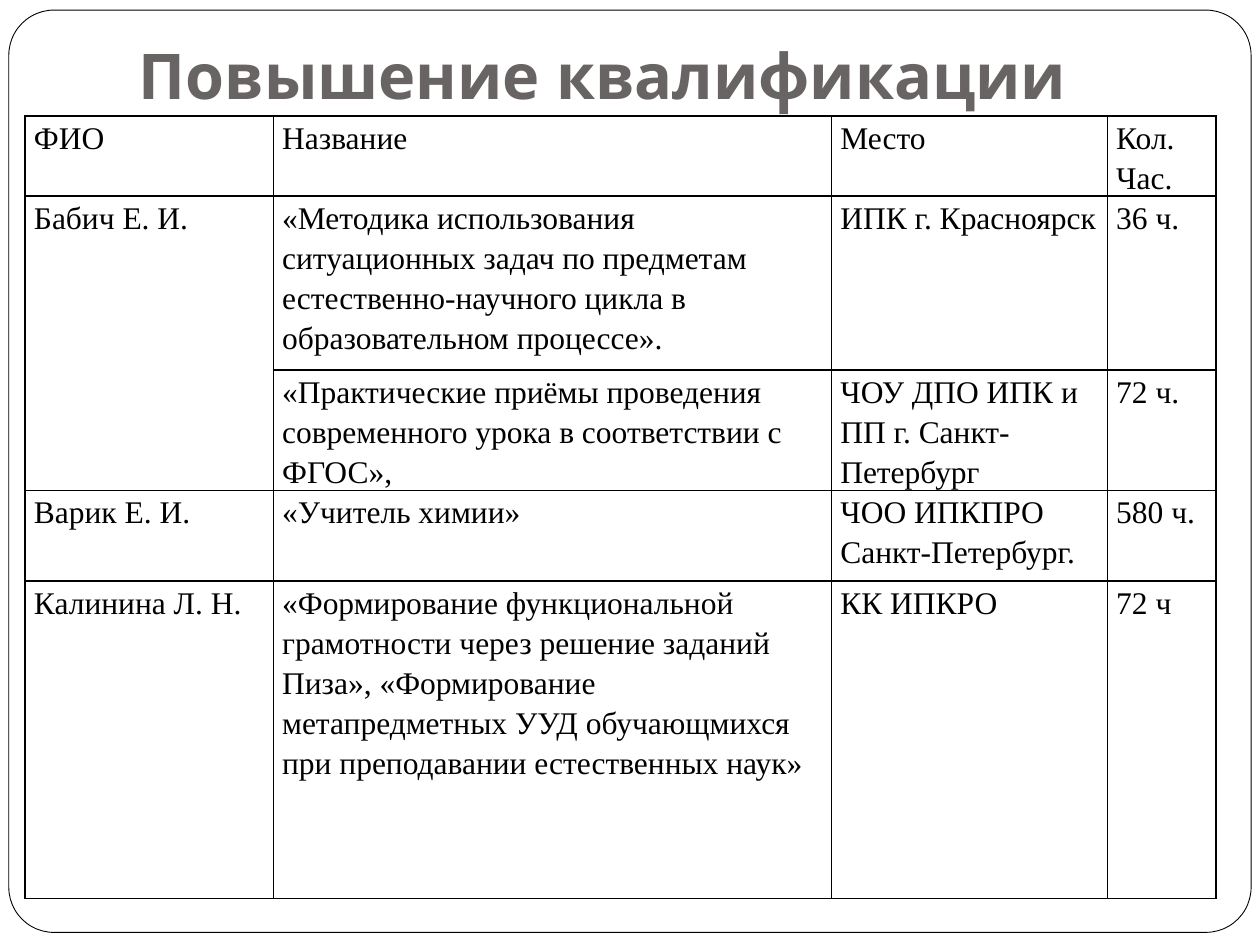
from lxml import etree
from pptx import Presentation
from pptx.dml.color import RGBColor
from pptx.enum.shapes import MSO_SHAPE
from pptx.enum.text import MSO_ANCHOR, MSO_AUTO_SIZE, PP_ALIGN
from pptx.oxml.ns import qn
from pptx.util import Inches, Pt

ROUND = MSO_SHAPE.ROUNDED_RECTANGLE
LEFT = PP_ALIGN.LEFT
BOTTOM, TOP = MSO_ANCHOR.BOTTOM, MSO_ANCHOR.TOP
BLACK, WHITE, GREY = "000000", "FFFFFF", "696464"


def color(code):
    return RGBColor.from_string(code)


def write(frame, text, size=18, font="Times New Roman", ink=BLACK, bold=False,
          space=1.15, anchor=TOP, pads=(0.07, 0, 0.07, 0)):
    frame.text = text
    frame.word_wrap = True
    frame.vertical_anchor = anchor
    (frame.margin_left, frame.margin_top,
     frame.margin_right, frame.margin_bottom) = map(Inches, pads)
    for para in frame.paragraphs:
        para.alignment = LEFT
        para.line_spacing = space
        for run in para.runs:
            run.font.size, run.font.name, run.font.bold = Pt(size), font, bold
            run.font.color.rgb = color(ink)


deck = Presentation()
deck.slide_width, deck.slide_height = Inches(10), Inches(7.5)
slide = deck.slides.add_slide(deck.slide_layouts[5])
shapes = slide.shapes

# Rounded frame, behind the title
box = shapes.add_shape(ROUND, *map(Inches, (0.07, 0.08, 9.86, 7.32)))
box.adjustments[0] = 0.049
box.shadow.inherit = False
box.fill.solid()
box.fill.fore_color.rgb = color(WHITE)
box.line.color.rgb = color(BLACK)
box.line.width = Pt(0.5)
shapes.title.element.addprevious(box.element)

# Title
title = shapes.title
title.left, title.top, title.width, title.height = map(Inches, (1, 0.3, 8.5, 0.69))
write(title.text_frame, "Повышение квалификации", size=36, font="Karla", ink=GREY,
      bold=True, space=1, anchor=BOTTOM, pads=(0.1, 0.05, 0.1, 0.1))
title.text_frame.auto_size = MSO_AUTO_SIZE.NONE

# Table of courses
cols = [1.97, 4.43, 2.19, 0.86]
rows = [0.39, 1.38, 0.95, 0.72, 2.52]
data = [
    ["ФИО", "Название", "Место", "Кол. Час."],
    ["Бабич Е. И.",
     "«Методика использования ситуационных задач по предметам "
     "естественно-научного цикла в образовательном процессе».",
     "ИПК г. Красноярск", "36 ч."],
    ["",
     "«Практические приёмы проведения современного урока "
     "в соответствии с ФГОС»,",
     "ЧОУ ДПО ИПК и ПП г. Санкт-Петербург", "72 ч."],
    ["Варик Е. И.", "«Учитель химии»", "ЧОО ИПКПРО Санкт-Петербург.", "580 ч."],
    ["Калинина Л. Н.",
     "«Формирование функциональной грамотности через решение заданий Пиза», "
     "«Формирование метапредметных УУД обучающмихся "
     "при преподавании естественных наук»",
     "КК ИПКРО", "72 ч"],
]
table = shapes.add_table(len(rows), len(cols), Inches(0.2), Inches(0.92),
                         Inches(sum(cols)), Inches(sum(rows))).table
table.first_row = table.horz_banding = False
for col, width in zip(table.columns, cols):
    col.width = Inches(width)
for row, height, texts in zip(table.rows, rows, data):
    row.height = Inches(height)
    for cell, text in zip(row.cells, texts):
        write(cell.text_frame, text)
        cell.margin_left = cell.margin_right = Inches(0.07)
        cell.margin_top = cell.margin_bottom = 0
        cell.vertical_anchor = TOP
        # Borders come before the fill in the cell properties
        props = cell._tc.get_or_add_tcPr()
        for side in ("a:lnL", "a:lnR", "a:lnT", "a:lnB"):
            edge = etree.SubElement(props, qn(side), w=str(Pt(1)))
            paint = etree.SubElement(edge, qn("a:solidFill"))
            etree.SubElement(paint, qn("a:srgbClr"), val=BLACK)
        cell.fill.solid()
        cell.fill.fore_color.rgb = color(WHITE)
table.cell(1, 0).merge(table.cell(2, 0))

deck.save("out.pptx")
